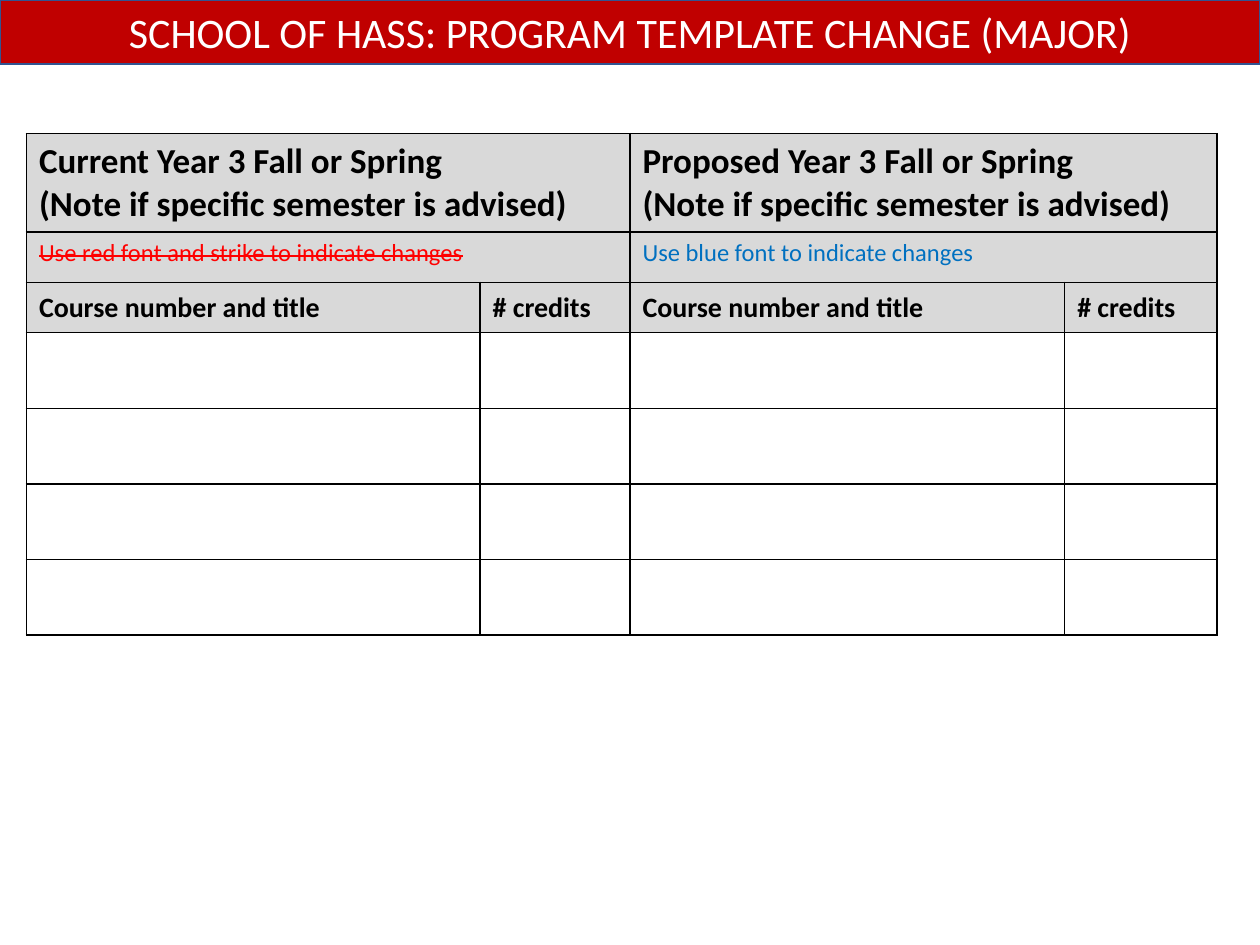
import pptx
import pptx.dml.color
import pptx.enum.dml
import pptx.enum.text
import pptx.oxml
import pptx.oxml.ns
import pptx.util

Inches = pptx.util.Inches
ANCHOR = pptx.enum.text.MSO_ANCHOR

TITLE = "SCHOOL OF HASS: PROGRAM TEMPLATE CHANGE (MAJOR)"
SEMESTER_NOTE = "(Note if specific semester is advised)"
COURSE_HEADINGS = ["Course number and title", "# credits"]
PLANS = [
    {
        "heading": ["Current Year 3 Fall or Spring", SEMESTER_NOTE],
        "hint": "Use red font and strike to indicate changes",
        "hint_style": "removed",
    },
    {
        "heading": ["Proposed Year 3 Fall or Spring", SEMESTER_NOTE],
        "hint": "Use blue font to indicate changes",
        "hint_style": "added",
    },
]
COLUMN_WIDTHS = [3.6, 1.19, 3.45, 1.21]
HEADER_HEIGHTS = [0.78, 0.4, 0.4]
COURSE_ROWS = 4
COURSE_HEIGHT = 0.6
TABLE_LEFT, TABLE_TOP = 0.21, 1.06

THEME = {
    "font": "Calibri",
    "banner": "C00000",
    "banner_line": "325491",
    "header": "D9D9D9",
    "border": "000000",
    "line_width": 1,
    "text": {
        "title": {"size": 24, "color": "FFFFFF", "bold": False},
        "heading": {"size": 20, "color": "000000", "bold": True},
        "removed": {"size": 14, "color": "FF0000", "bold": False, "strike": True},
        "added": {"size": 14, "color": "0070C0", "bold": False},
        "column": {"size": 16, "color": "000000", "bold": True},
    },
}


def rgb(value):
    return pptx.dml.color.RGBColor.from_string(value)


def write_text(text_frame, lines, style_name):
    style = THEME["text"][style_name]
    font_values = {
        "name": THEME["font"],
        "size": pptx.util.Pt(style["size"]),
        "bold": style["bold"],
    }
    text_frame.text = "\n".join(lines)
    for paragraph in text_frame.paragraphs:
        for run in paragraph.runs:
            for name, value in font_values.items():
                setattr(run.font, name, value)
            run.font.color.rgb = rgb(style["color"])
            if style.get("strike"):
                run.font._element.set("strike", "sngStrike")


def add_borders(cell):
    properties = cell._tc.get_or_add_tcPr()
    width = pptx.util.Pt(THEME["line_width"])
    for position, side in enumerate(("lnL", "lnR", "lnT", "lnB")):
        border = pptx.oxml.parse_xml(
            f'<a:{side} {pptx.oxml.ns.nsdecls("a")} w="{width}"><a:solidFill>'
            f'<a:srgbClr val="{THEME["border"]}"/></a:solidFill></a:{side}>'
        )
        properties.insert(position, border)


def add_banner(slide):
    banner = slide.shapes.title
    frame = {"left": 0, "top": 0, "width": 10, "height": 0.51}
    for name, value in frame.items():
        setattr(banner, name, Inches(value))
    banner.fill.solid()
    banner.fill.fore_color.rgb = rgb(THEME["banner"])
    banner.line.color.rgb = rgb(THEME["banner_line"])
    banner.line.width = pptx.util.Pt(THEME["line_width"])
    text_frame = banner.text_frame
    write_text(text_frame, [TITLE], "title")
    text_frame.auto_size = pptx.enum.text.MSO_AUTO_SIZE.NONE
    text_frame.vertical_anchor = ANCHOR.MIDDLE
    text_frame.paragraphs[0].alignment = pptx.enum.text.PP_ALIGN.CENTER


def add_plan_table(slide):
    heights = HEADER_HEIGHTS + [COURSE_HEIGHT] * COURSE_ROWS
    table = slide.shapes.add_table(
        len(heights), len(COLUMN_WIDTHS), Inches(TABLE_LEFT), Inches(TABLE_TOP),
        Inches(sum(COLUMN_WIDTHS)), Inches(sum(heights)),
    ).table
    table.horz_banding = False
    for column, width in zip(table.columns, COLUMN_WIDTHS):
        column.width = Inches(width)
    for index, (row, height) in enumerate(zip(table.rows, heights)):
        row.height = Inches(height)
        for cell in row.cells:
            if index < len(HEADER_HEIGHTS):
                cell.fill.solid()
                cell.fill.fore_color.rgb = rgb(THEME["header"])
            else:
                cell.fill.background()
            add_borders(cell)

    span = len(COURSE_HEADINGS)
    for number, plan in enumerate(PLANS):
        first = number * span
        merged_rows = [
            (plan["heading"], "heading"),
            ([plan["hint"]], plan["hint_style"]),
        ]
        for row, (lines, style_name) in enumerate(merged_rows):
            cell = table.cell(row, first)
            cell.merge(table.cell(row, first + span - 1))
            write_text(cell.text_frame, lines, style_name)
        for offset, heading in enumerate(COURSE_HEADINGS):
            cell = table.cell(len(merged_rows), first + offset)
            write_text(cell.text_frame, [heading], "column")
            cell.vertical_anchor = ANCHOR.MIDDLE


def main():
    presentation = pptx.Presentation()
    presentation.slide_width = Inches(10)
    presentation.slide_height = Inches(7.5)
    slide = presentation.slides.add_slide(presentation.slide_layouts.get_by_name("Title Only"))
    add_banner(slide)
    add_plan_table(slide)
    presentation.save("out.pptx")


if __name__ == "__main__":
    main()
